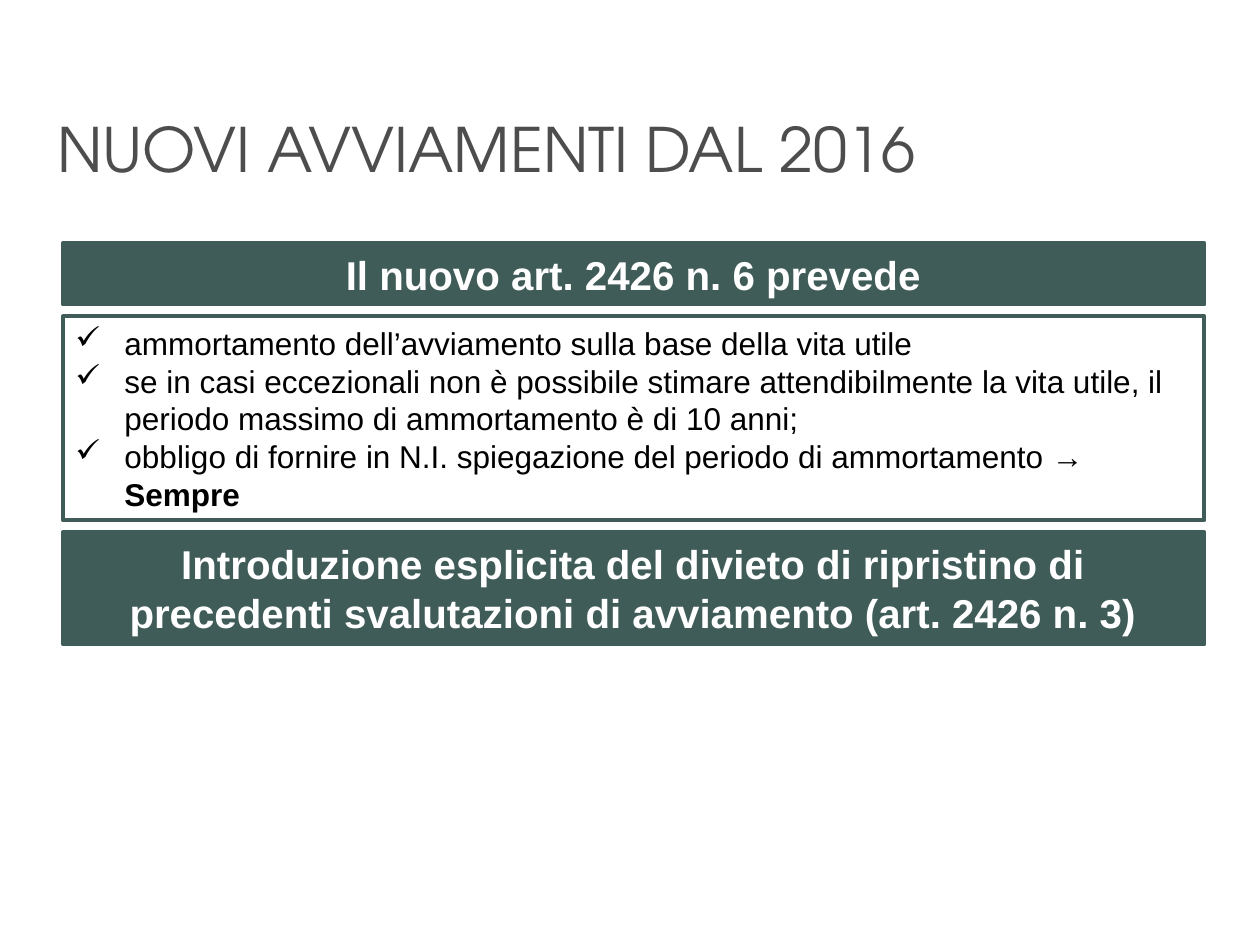
from lxml import etree
from pptx import Presentation
from pptx.dml.color import RGBColor
from pptx.enum.shapes import MSO_SHAPE
from pptx.enum.text import MSO_ANCHOR, PP_ALIGN
from pptx.oxml.ns import qn
from pptx.util import Cm, Pt

RECT = MSO_SHAPE.RECTANGLE
TOP, MIDDLE = MSO_ANCHOR.TOP, MSO_ANCHOR.MIDDLE
LEFT, CENTER = PP_ALIGN.LEFT, PP_ALIGN.CENTER
COLORS = {"green": "405C58", "white": "FFFFFF", "black": "000000", "gray": "4D4D4D"}
EDGE, WIDTH, START, GAP = 1.27, 23.01, 4.9, 0.24
INDENT = Cm(0.99)
ITEMS = [
    ("ammortamento dell’avviamento sulla base della vita utile", ""),
    ("se in casi eccezionali non è possibile stimare attendibilmente la vita utile, "
     "il periodo massimo di ammortamento è di 10 anni;", ""),
    ("obbligo di fornire in N.I. spiegazione del periodo di ammortamento → ", "Sempre"),
]


def color(name):
    return RGBColor.from_string(COLORS[name])


def style(para, size, name, bold=False, face="Arial"):
    for run in para.runs:
        run.font.size = Pt(size)
        run.font.name = face
        run.font.bold = bold
        run.font.color.rgb = color(name)


def add_title(slide, text):
    frame = slide.shapes.add_textbox(Cm(0.91), Cm(2.29), Cm(22.5), Cm(2.74)).text_frame
    frame.word_wrap = True
    frame.text = text
    para = frame.paragraphs[0]
    para.line_spacing = 0.9
    style(para, 35, "gray", face="TeX Gyre Adventor")


def add_box(slide, top, height, anchor):
    box = slide.shapes.add_shape(RECT, Cm(EDGE), Cm(top), Cm(WIDTH), Cm(height))
    box.shadow.inherit = False
    box.fill.background()
    box.line.color.rgb = color("green")
    box.line.width = Pt(2.25)
    box.text_frame.word_wrap = True
    box.text_frame.vertical_anchor = anchor
    return box


def add_bar(slide, top, height, text):
    bar = add_box(slide, top, height, TOP)
    bar.fill.solid()
    bar.fill.fore_color.rgb = color("green")
    bar.text_frame.text = text
    para = bar.text_frame.paragraphs[0]
    para.alignment = CENTER
    para.line_spacing = Pt(28)
    style(para, 23, "white", bold=True)


def add_check(para):
    props = para._p.get_or_add_pPr()
    props.set("marL", str(INDENT))
    props.set("indent", str(-INDENT))
    etree.SubElement(props, qn("a:buChar")).set("char", "✓")


def add_list(slide, top, height, items):
    frame = add_box(slide, top, height, MIDDLE).text_frame
    frame.text = "\n".join(text for text, _ in items)
    for para, (_, strong) in zip(frame.paragraphs, items):
        para.alignment = LEFT
        add_check(para)
        style(para, 18, "black")
        if strong:
            para.add_run().text = strong
            style(para, 18, "black")
            para.runs[-1].font.bold = True


def main():
    deck = Presentation()
    deck.slide_width, deck.slide_height = Cm(25.4), Cm(19.05)
    slide = deck.slides.add_slide(deck.slide_layouts[6])
    add_title(slide, "NUOVI AVVIAMENTI DAL 2016")
    parts = [
        (add_bar, 1.24, "Il nuovo art. 2426 n. 6 prevede"),
        (add_list, 4.11, ITEMS),
        (add_bar, 2.26, "Introduzione esplicita del divieto di ripristino di "
                        "precedenti svalutazioni di avviamento (art. 2426 n. 3)"),
    ]
    top = START
    for add, height, content in parts:
        add(slide, top, height, content)
        top += height + GAP
    deck.save("out.pptx")


if __name__ == "__main__":
    main()
